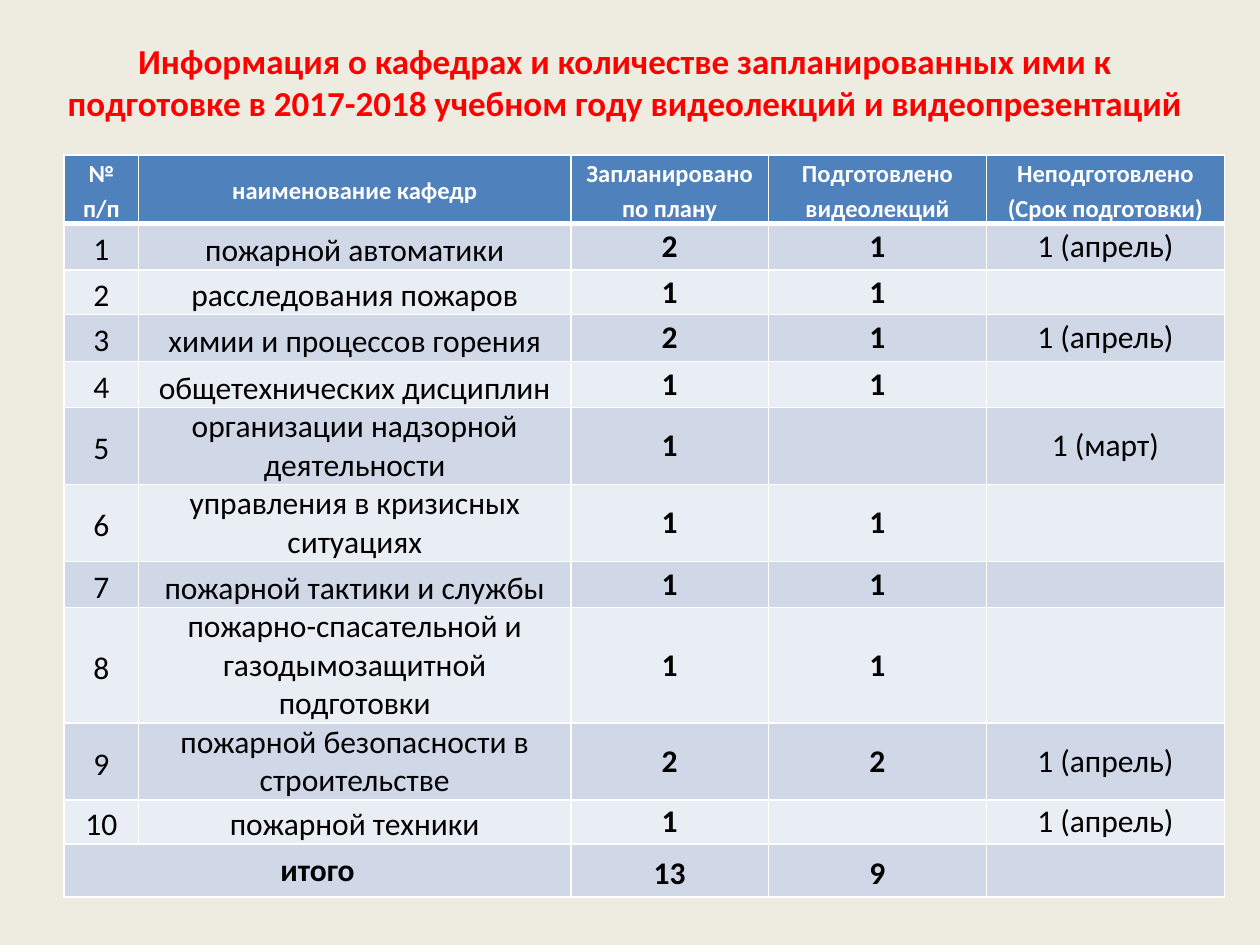
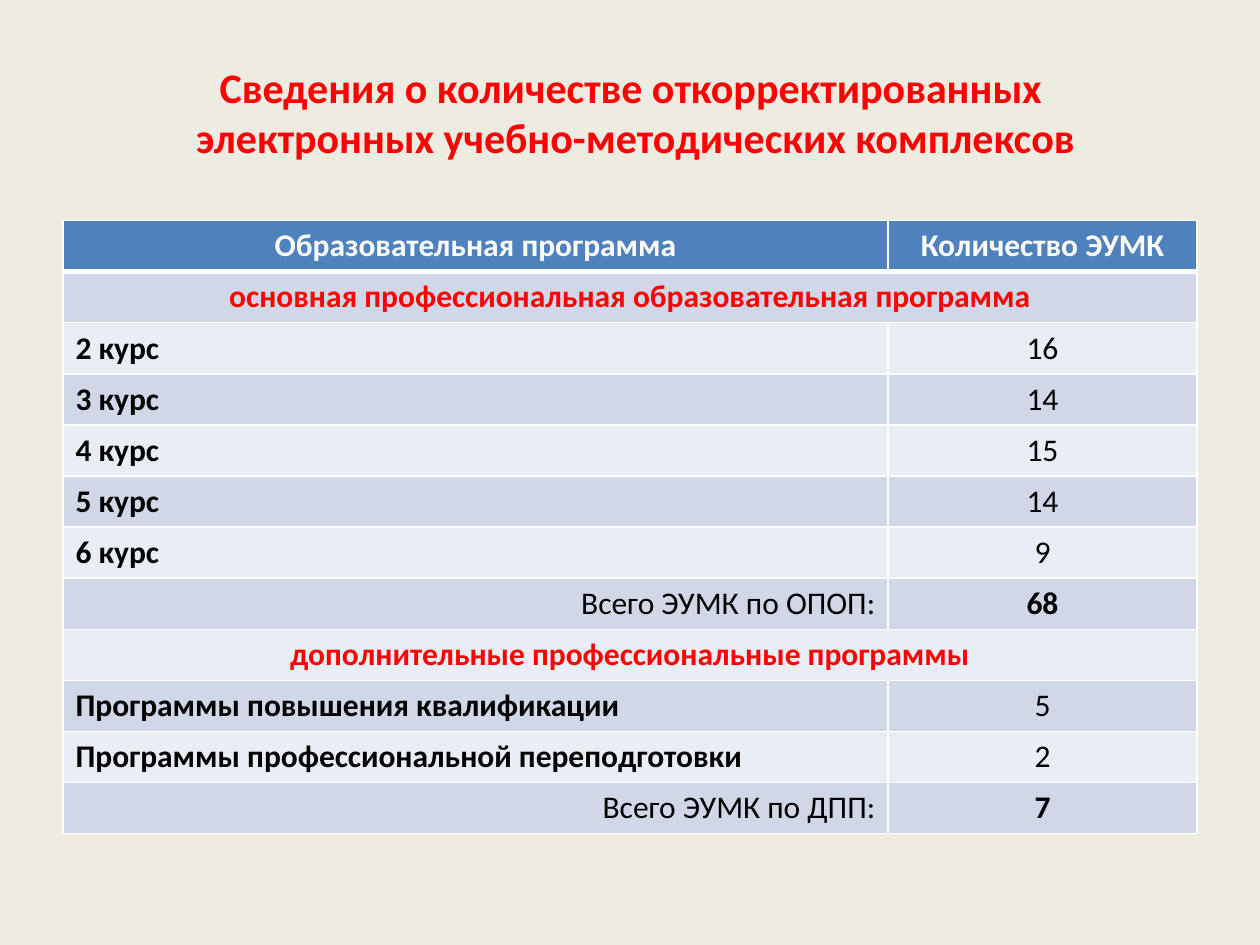
"""Build two slides with tables on teaching materials."""
from dataclasses import dataclass, replace
from typing import NamedTuple

from lxml.etree import SubElement
from pptx import Presentation
from pptx.dml.color import RGBColor
from pptx.enum.text import MSO_ANCHOR, PP_ALIGN
from pptx.oxml.ns import qn
from pptx.slide import Slide
from pptx.table import _Cell
from pptx.text.text import TextFrame
from pptx.util import Pt

SAND = RGBColor(0xEE, 0xEC, 0xE1)
RED = RGBColor(0xFF, 0x00, 0x00)
BLUE = RGBColor(0x4F, 0x81, 0xBD)
DARK = RGBColor(0xD0, 0xD8, 0xE8)
LIGHT = RGBColor(0xE9, 0xED, 0xF4)
WHITE = RGBColor(0xFF, 0xFF, 0xFF)
BLACK = RGBColor(0x00, 0x00, 0x00)
FONT = "Calibri"


@dataclass(frozen=True)
class Look:
    """How a piece of text is set."""
    size: float = 18
    color: RGBColor = BLACK
    bold: bool = False
    align: PP_ALIGN = PP_ALIGN.CENTER
    anchor: MSO_ANCHOR = MSO_ANCHOR.MIDDLE
    lead: float | None = None


class Entry(NamedTuple):
    """One table cell."""
    text: str
    look: Look


class Title(NamedTuple):
    """A slide title and its box."""
    text: str
    size: float
    left: float
    top: float
    width: float


class Grid(NamedTuple):
    """A table; a row with fewer entries merges its first cells."""
    left: float
    top: float
    widths: list[float]
    heights: list[float]
    pad: tuple[float, float]
    rows: list[list[Entry]]


PLAIN = Look()
BOLD = Look(bold=True)
SPACED = Look(lead=1.15)
NAME = Look(anchor=MSO_ANCHOR.BOTTOM)
HEAD = Look(size=14, color=WHITE, bold=True, lead=1.15)
TOTAL = Look(bold=True, lead=1.15)

TOP = Look(anchor=MSO_ANCHOR.TOP)
COUNT = replace(TOP, bold=True)
LABEL = replace(COUNT, align=PP_ALIGN.LEFT)
SUM = replace(TOP, align=PP_ALIGN.RIGHT)
BAND = replace(COUNT, color=RED)
CAPTION = replace(COUNT, color=WHITE)

CHAIRS = [
    ("пожарной автоматики", "2", "1", "1 (апрель)"),
    ("расследования пожаров", "1", "1", ""),
    ("химии и процессов горения", "2", "1", "1 (апрель)"),
    ("общетехнических дисциплин", "1", "1", ""),
    ("организации надзорной деятельности", "1", "", "1 (март)"),
    ("управления в кризисных ситуациях", "1", "1", ""),
    ("пожарной тактики и службы", "1", "1", ""),
    ("пожарно-спасательной и газодымозащитной подготовки", "1", "1", ""),
    ("пожарной безопасности в строительстве", "2", "2", "1 (апрель)"),
    ("пожарной техники", "1", "", "1 (апрель)"),
]
HEADS = ["№ п/п", "наименование кафедр", "Запланировано по плану",
         "Подготовлено видеолекций", "Неподготовлено\n(Срок подготовки)"]
YEARS = [("2 курс", "16"), ("3 курс", "14"), ("4 курс", "15"),
         ("5 курс", "14"), ("6 курс", "9")]
EXTRA = [("Программы повышения квалификации", "5"),
         ("Программы профессиональной переподготовки", "2")]


def format_text(frame: TextFrame, text: str, look: Look) -> None:
    """Fill a text frame and format its runs."""
    frame.text = text
    for para in frame.paragraphs:
        para.alignment = look.align
        if look.lead:
            para.line_spacing = look.lead
        for run in para.runs:
            font = run.font
            font.name, font.size, font.bold = FONT, Pt(look.size), look.bold
            font.color.rgb = look.color


def add_edges(cell: _Cell, above: float, below: float) -> None:
    """Draw the white borders of a cell."""
    props = cell._tc.get_or_add_tcPr()
    edges = {"a:lnL": 1, "a:lnR": 1, "a:lnT": above, "a:lnB": below}
    for tag, width in edges.items():
        line = SubElement(props, qn(tag), w=str(Pt(width)))
        fill = SubElement(line, qn("a:solidFill"))
        SubElement(fill, qn("a:srgbClr"), val=str(WHITE))


def add_title(slide: Slide, title: Title) -> None:
    """Write the slide title."""
    box = slide.shapes.add_textbox(
        Pt(title.left), Pt(title.top), Pt(title.width), Pt(50))
    frame = box.text_frame
    frame.word_wrap = True
    frame.vertical_anchor = MSO_ANCHOR.MIDDLE
    format_text(frame, title.text, Look(title.size, RED, True))


def add_grid(slide: Slide, grid: Grid) -> None:
    """Draw a table with a blue head and striped rows."""
    table = slide.shapes.add_table(
        len(grid.heights), len(grid.widths), Pt(grid.left), Pt(grid.top),
        Pt(sum(grid.widths)), Pt(sum(grid.heights))).table
    for col, width in zip(table.columns, grid.widths):
        col.width = Pt(width)
    for row, height in zip(table.rows, grid.heights):
        row.height = Pt(height)
    side, edge = grid.pad
    for r, line in enumerate(grid.rows):
        span = len(grid.widths) - len(line)
        if span:
            table.cell(r, 0).merge(table.cell(r, span))
        for c in range(len(grid.widths)):
            cell = table.cell(r, c)
            add_edges(cell, 3 if r == 1 else 1, 3 if r == 0 else 1)
            cell.fill.solid()
            cell.fill.fore_color.rgb = (
                BLUE if r == 0 else DARK if r % 2 else LIGHT)
            cell.margin_left = cell.margin_right = Pt(side)
            cell.margin_top = cell.margin_bottom = Pt(edge)
        for i, entry in enumerate(line):
            cell = table.cell(r, i + span if i else 0)
            cell.vertical_anchor = entry.look.anchor
            format_text(cell.text_frame, entry.text, entry.look)


def style_row(texts: list[str], looks: list[Look]) -> list[Entry]:
    """Pair the texts of a row with their looks."""
    return [Entry(*pair) for pair in zip(texts, looks)]


def chair_rows() -> list[list[Entry]]:
    """Give the rows of the table of departments."""
    looks = [SPACED, NAME, BOLD, BOLD, PLAIN]
    body = [style_row([str(n), *chair], looks)
            for n, chair in enumerate(CHAIRS, 1)]
    total = style_row(["итого", "13", "9", ""], [BOLD, TOTAL, TOTAL, PLAIN])
    return [style_row(HEADS, [HEAD] * 5), *body, total]


def course_rows() -> list[list[Entry]]:
    """Give the rows of the table of programmes."""
    rows = [style_row(["Образовательная программа", "Количество ЭУМК"],
                      [CAPTION] * 2)]
    parts = [
        ("основная профессиональная образовательная программа", YEARS,
         ["Всего ЭУМК по ОПОП:", "68"]),
        ("дополнительные профессиональные программы", EXTRA,
         ["Всего ЭУМК по ДПП:", "7"]),
    ]
    for band, items, total in parts:
        rows.append([Entry(band, BAND)])
        rows += [style_row(list(item), [LABEL, TOP]) for item in items]
        rows.append(style_row(total, [SUM, COUNT]))
    return rows


def main() -> None:
    """Build and save the deck."""
    deck = Presentation()
    deck.slide_width, deck.slide_height = Pt(720), Pt(540)
    pages = [
        (Title("Информация о кафедрах и количестве запланированных ими к "
               "подготовке в 2017-2018 учебном году видеолекций и "
               "видеопрезентаций", 20, 25.2, 21.6, 664),
         Grid(36.7, 88.5, [42.5, 247, 113, 124.5, 136],
              [39.4, 26.4, 25.6, 26.6, 26.4, 44, 44, 26.4, 66, 44, 25.2, 30.2],
              (5, 0), chair_rows())),
        (Title("Сведения о количестве откорректированных \v"
               "электронных учебно-методических комплексов",
               24, 20.2, 38.9, 686),
         Grid(36, 126, [471.5, 176.5], [29.2] * 12, (7.2, 3.6),
              course_rows())),
    ]
    for title, grid in pages:
        slide = deck.slides.add_slide(deck.slide_layouts[6])
        slide.background.fill.solid()
        slide.background.fill.fore_color.rgb = SAND
        add_title(slide, title)
        add_grid(slide, grid)
    deck.save("out.pptx")


if __name__ == "__main__":
    main()
